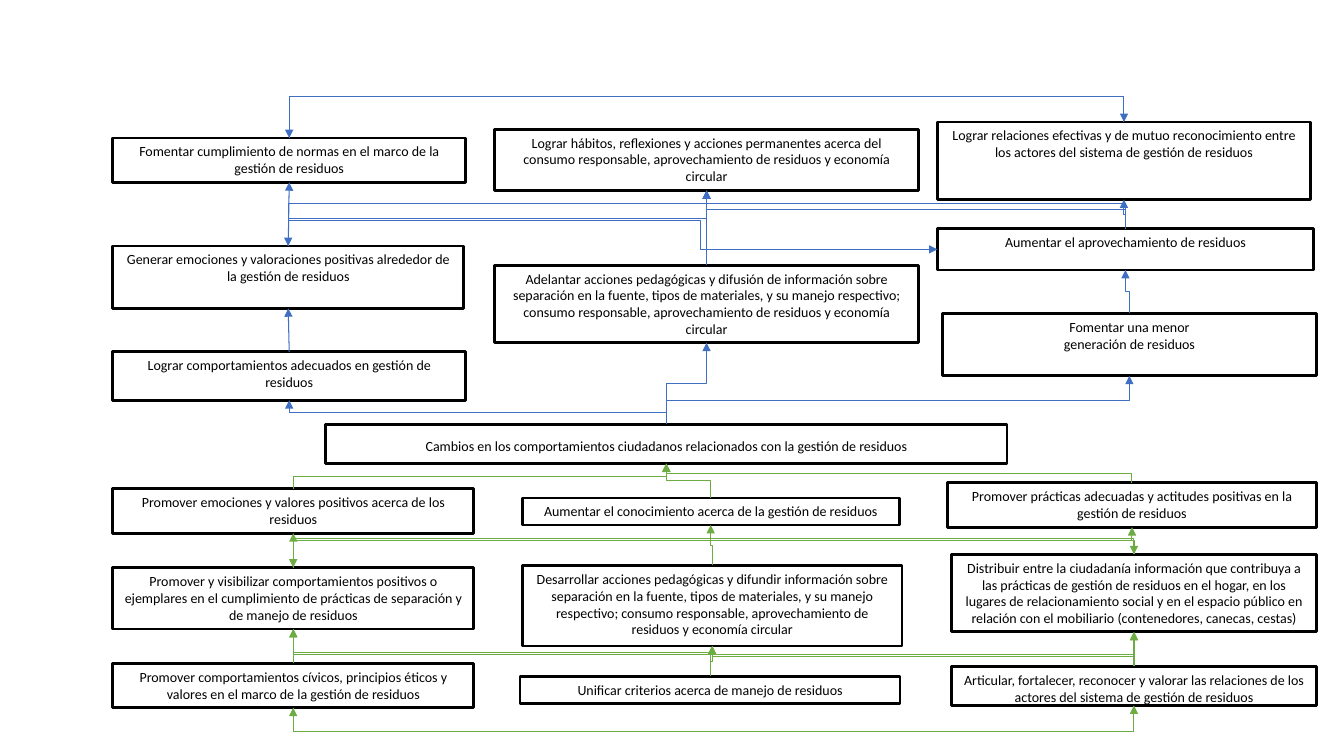
from dataclasses import dataclass
from typing import Optional

from lxml import etree
from pptx import Presentation
from pptx import util as u
from pptx.dml.color import RGBColor
from pptx.enum import shapes, text
from pptx.oxml import ns

Pt = u.Pt


@dataclass(frozen=True)
class Theme:
    font: str = "Calibri"
    size: float = 10
    ink: str = "000000"
    paper: str = "FFFFFF"
    blue: str = "3F6FC3"
    green: str = "6DAC43"
    border: float = 2
    arrow: float = 0.75


@dataclass(frozen=True)
class Box:
    name: str
    x: float
    y: float
    w: float
    h: float
    label: str
    anchor: text.MSO_ANCHOR = text.MSO_ANCHOR.TOP
    spacing: float = 1.0


@dataclass(frozen=True)
class Arrow:
    start: str
    end: str
    begin_site: int = 0
    end_site: int = 2
    level: Optional[float] = None  # height of the horizontal run
    turn: Optional[float] = None  # x of a second vertical run


THEME = Theme()
TOP, LEFT, BOTTOM = 0, 1, 2
COL1, COL2, COL3 = 80.6, 353.5, 669.6

# Objectives, from the top row to the bottom row
BOXES = [
    Box("normas", COL1, 98.6, 252, 31.7,
        "Fomentar cumplimiento de normas en el marco de la gestión de residuos"),
    Box("hábitos", COL2, 92.2, 302.4, 43.9,
        "Lograr hábitos, reflexiones y acciones permanentes acerca del consumo "
        "responsable, aprovechamiento de residuos y economía circular"),
    Box("relaciones", COL3, 87.1, 266.4, 55.4,
        "Lograr relaciones efectivas y de mutuo reconocimiento entre los actores "
        "del sistema de gestión de residuos"),
    Box("emociones", COL1, 175.7, 250.6, 44.6,
        "Generar emociones y valoraciones positivas alrededor de la gestión de residuos"),
    Box("adelantar", COL2, 189.4, 302.4, 55.4,
        "Adelantar acciones pedagógicas y difusión de información sobre separación en "
        "la fuente, tipos de materiales, y su manejo respectivo; consumo responsable, "
        "aprovechamiento de residuos y economía circular"),
    Box("aprovechar", COL3, 163.4, 268.6, 29.5,
        "Aumentar el aprovechamiento de residuos"),
    Box("menor", 673.2, 223.9, 267.1, 44.6,
        "Fomentar una menor\vgeneración de residuos"),
    Box("adecuados", COL1, 251.3, 252, 34.6,
        "Lograr comportamientos adecuados en gestión de residuos"),
    Box("cambios", 232.6, 303.1, 486.7, 28.1,
        "Cambios en los comportamientos ciudadanos relacionados con la gestión de residuos",
        text.MSO_ANCHOR.MIDDLE, 1.2),
    Box("valores", COL1, 349.2, 257.8, 31.7,
        "Promover emociones y valores positivos acerca de los residuos"),
    Box("conocimiento", 373, 355.7, 269.3, 19.4,
        "Aumentar el conocimiento acerca de la gestión de residuos"),
    Box("prácticas", 676.8, 344.9, 263.5, 31.7,
        "Promover prácticas adecuadas y actitudes positivas en la gestión de residuos"),
    Box("visibilizar", COL1, 405.4, 257.8, 43.9,
        "Promover y visibilizar comportamientos positivos o ejemplares en el "
        "cumplimiento de prácticas de separación y de manejo de residuos"),
    Box("desarrollar", 373, 403.9, 271.4, 57.6,
        "Desarrollar acciones pedagógicas y difundir información sobre separación en "
        "la fuente, tipos de materiales, y su manejo respectivo; consumo responsable, "
        "aprovechamiento de residuos y economía circular"),
    Box("distribuir", 679.7, 396, 260.6, 55.4,
        "Distribuir entre la ciudadanía información que contribuya a las prácticas de "
        "gestión de residuos en el hogar, en los lugares de relacionamiento social y en "
        "el espacio público en relación con el mobiliario (contenedores, canecas, cestas)"),
    Box("cívicos", COL1, 473.8, 257.8, 31.7,
        "Promover comportamientos cívicos, principios éticos y valores en el marco de "
        "la gestión de residuos"),
    Box("unificar", 371.5, 483.1, 271.4, 19.4,
        "Unificar criterios acerca de manejo de residuos"),
    Box("articular", 679.7, 475.9, 260.6, 28.1,
        "Articular, fortalecer, reconocer y valorar las relaciones de los actores del "
        "sistema de gestión de residuos"),
]

# Links above (blue) and below (green) the central objective
ARROWS = {
    THEME.blue: [
        Arrow("cambios", "adecuados"),
        Arrow("cambios", "adelantar"),
        Arrow("cambios", "menor"),
        Arrow("adecuados", "emociones"),
        Arrow("adelantar", "hábitos"),
        Arrow("aprovechar", "relaciones"),
        Arrow("menor", "aprovechar"),
        Arrow("emociones", "normas"),
        Arrow("emociones", "hábitos"),
        Arrow("aprovechar", "hábitos"),
        Arrow("normas", "relaciones", TOP, TOP, 69.1),
        Arrow("relaciones", "normas", TOP, TOP, 69.1),
        Arrow("emociones", "aprovechar", TOP, LEFT, 157.7, 500.4),
        Arrow("aprovechar", "emociones", TOP, TOP, 145.4),
    ],
    THEME.green: [
        Arrow("valores", "cambios"),
        Arrow("conocimiento", "cambios"),
        Arrow("prácticas", "cambios"),
        Arrow("visibilizar", "valores"),
        Arrow("cívicos", "visibilizar"),
        Arrow("desarrollar", "conocimiento"),
        Arrow("unificar", "desarrollar"),
        Arrow("articular", "distribuir"),
        Arrow("distribuir", "prácticas"),
        Arrow("cívicos", "desarrollar"),
        Arrow("articular", "desarrollar"),
        Arrow("unificar", "visibilizar"),
        Arrow("unificar", "distribuir"),
        Arrow("articular", "cívicos", BOTTOM, BOTTOM, 522.7),
        Arrow("cívicos", "articular", BOTTOM, BOTTOM, 522.7),
        Arrow("distribuir", "visibilizar", TOP, TOP, 385.9),
        Arrow("visibilizar", "distribuir", TOP, TOP, 384.5),
    ],
}


def draw_box(slide, box: Box):
    sp = slide.shapes.add_shape(shapes.MSO_SHAPE.RECTANGLE,
                                *map(Pt, (box.x, box.y, box.w, box.h)))
    sp.shadow.inherit = False
    sp.fill.solid()
    sp.fill.fore_color.rgb = RGBColor.from_string(THEME.paper)
    sp.line.color.rgb = RGBColor.from_string(THEME.ink)
    sp.line.width = Pt(THEME.border)
    tf = sp.text_frame
    p = tf.paragraphs[0]
    p.text = box.label
    formats = [
        (tf, {"word_wrap": True, "vertical_anchor": box.anchor}),
        (p, {"alignment": text.PP_ALIGN.CENTER, "line_spacing": box.spacing}),
        (p.font, {"name": THEME.font, "size": Pt(THEME.size)}),
    ]
    for target, values in formats:
        for key, value in values.items():
            setattr(target, key, value)
    p.font.color.rgb = RGBColor.from_string(THEME.ink)
    return sp


def bend(c, arrow: Arrow) -> None:
    """Turn an elbow connector so that it leaves its box vertically."""
    x1, y1, x2, y2 = c.begin_x, c.begin_y, c.end_x, c.end_y
    dx, dy = x2 - x1, y2 - y1
    c.width, c.height = abs(dy), abs(dx)
    c.left = (x1 + x2 - abs(dy)) // 2
    c.top = (y1 + y2 - abs(dx)) // 2
    up_right = dx > 0 and dy < 0
    xfrm = c._element.spPr.find(ns.qn("a:xfrm"))
    xfrm.set("rot", "5400000" if up_right else "16200000")
    xfrm.set("flipH", str(int(up_right or dy > 0)))
    xfrm.set("flipV", str(int(up_right or dx < 0)))
    # Adjustments: share of the way at which each run turns
    shares = []
    if arrow.level is not None:
        shares.append((Pt(arrow.level) - y1) / dy)
    if arrow.turn is not None:
        shares.append((Pt(arrow.turn) - x1) / dx)
    geom = c._element.spPr.find(ns.qn("a:prstGeom"))
    geom.set("prst", "bentConnector4" if arrow.turn else "bentConnector3")
    guides = geom.find(ns.qn("a:avLst"))
    for i, share in enumerate(shares, 1):
        etree.SubElement(guides, ns.qn("a:gd"), name=f"adj{i}",
                         fmla=f"val {round(share * 100000)}")


def draw_arrow(slide, arrow: Arrow, color: str, placed: dict) -> None:
    a, b = placed[arrow.start], placed[arrow.end]
    shift = abs(a.left + a.width / 2 - b.left - b.width / 2)
    straight = shift < Pt(1)
    kind = shapes.MSO_CONNECTOR.STRAIGHT if straight else shapes.MSO_CONNECTOR.ELBOW
    c = slide.shapes.add_connector(kind, 0, 0, 0, 0)
    c.begin_connect(a, arrow.begin_site)
    c.end_connect(b, arrow.end_site)
    if not straight:
        bend(c, arrow)
    c.line.color.rgb = RGBColor.from_string(color)
    c.line.width = Pt(THEME.arrow)
    sp_pr = c._element.spPr
    etree.SubElement(sp_pr.find(ns.qn("a:ln")), ns.qn("a:tailEnd"), type="triangle")
    etree.SubElement(sp_pr, ns.qn("a:effectLst"))


def main() -> None:
    prs = Presentation()
    prs.slide_width, prs.slide_height = Pt(960), Pt(540)
    s = prs.slides.add_slide(prs.slide_layouts[6])
    placed = {box.name: draw_box(s, box) for box in BOXES}
    for color, arrows in ARROWS.items():
        for arrow in arrows:
            draw_arrow(s, arrow, color, placed)
    prs.save("out.pptx")


if __name__ == "__main__":
    main()
